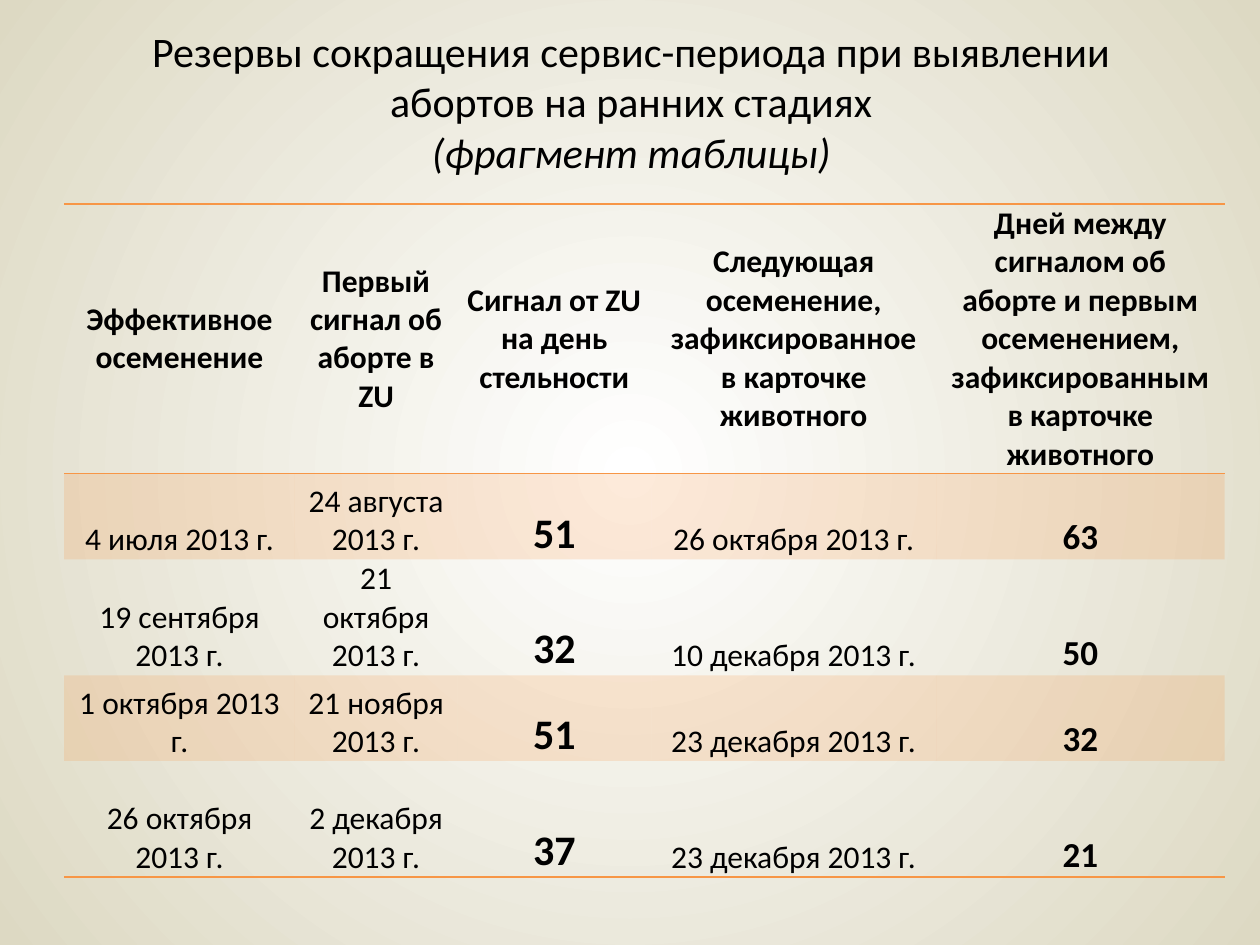
from pptx import Presentation, util as u
from pptx.dml.color import RGBColor
from pptx.enum import text as t
from pptx.oxml import parse_xml
from pptx.oxml.ns import nsdecls, qn

HUES = {"ink": "000000", "line": "F79646", "mid": "FFFFFF", "edge": "DDD9C3"}
PLAIN = "{2D5ABB26-0587-4C30-8999-92F81FD0307C}"
COLS = [1.83, 1.29, 1.54, 2.26, 2.29]
ROWS = [2.14, 0.68, 0.92, 0.68, 0.92]
SIZES = [18, 18, 24, 18, 20]
BOLD = [False, False, True, False, True]
HEAD = [
    "Эффективное осеменение",
    "Первый сигнал об аборте в ZU",
    "Сигнал от ZU на день стельности",
    "Следующая\nосеменение, зафиксированное в карточке животного",
    "Дней между сигналом об аборте и первым осеменением, "
    "зафиксированным в карточке животного",
]
BODY = [
    ["4 июля 2013 г.", "24 августа 2013 г.", "51", "26 октября 2013 г.", "63"],
    ["19 сентября 2013 г.", "21 октября 2013 г.", "32", "10 декабря 2013 г.", "50"],
    ["1 октября 2013 г.", "21 ноября 2013 г.", "51", "23 декабря 2013 г.", "32"],
    ["26 октября 2013 г.", "2 декабря 2013 г.", "37", "23 декабря 2013 г.", "21"],
]


def add_run(para, words, size, bold=False, slant=False):
    run = para.add_run()
    run.text = words
    font = run.font
    font.name = "Calibri"
    font.size = u.Pt(size)
    font.bold = bold
    font.italic = slant
    font.color.rgb = RGBColor.from_string(HUES["ink"])


def set_back(slide):
    slide.background.fill.solid()
    props = slide.background._cSld.find(qn("p:bg")).find(qn("p:bgPr"))
    old = props.find(qn("a:solidFill"))
    props.replace(old, parse_xml(
        f'<a:gradFill {nsdecls("a")} rotWithShape="1"><a:gsLst>'
        f'<a:gs pos="0"><a:srgbClr val="{HUES["mid"]}"/></a:gs>'
        f'<a:gs pos="100000"><a:srgbClr val="{HUES["edge"]}"/></a:gs>'
        '</a:gsLst><a:path path="circle">'
        '<a:fillToRect l="50000" t="50000" r="50000" b="50000"/>'
        '</a:path></a:gradFill>'))


def add_title(slide):
    title = slide.shapes.title
    title.left, title.top = u.Inches(0.51), u.Inches(0.13)
    title.width, title.height = u.Inches(9), u.Inches(1.34)
    frame = title.text_frame
    frame.vertical_anchor = t.MSO_ANCHOR.MIDDLE
    para = frame.paragraphs[0]
    para.alignment = t.PP_ALIGN.CENTER
    add_run(para, "Резервы сокращения сервис-периода при выявлении "
                  "абортов на ранних стадиях", 24)
    para.add_line_break()
    add_run(para, "(фрагмент таблицы)", 24, slant=True)


def add_edge(cell, side):
    cell._tc.get_or_add_tcPr().append(parse_xml(
        f'<a:{side} {nsdecls("a")} w="12700"><a:solidFill>'
        f'<a:srgbClr val="{HUES["line"]}"/></a:solidFill></a:{side}>'))


def add_tint(cell):
    cell._tc.get_or_add_tcPr().append(parse_xml(
        f'<a:solidFill {nsdecls("a")}><a:srgbClr val="{HUES["line"]}">'
        '<a:alpha val="20000"/></a:srgbClr></a:solidFill>'))


def fill_cell(cell, words, size, bold, anchor):
    cell.margin_left = cell.margin_right = u.Inches(0.07)
    cell.margin_top = cell.margin_bottom = 0
    cell.vertical_anchor = anchor
    frame = cell.text_frame
    for i, part in enumerate(words.split("\n")):
        para = frame.add_paragraph() if i else frame.paragraphs[0]
        para.alignment = t.PP_ALIGN.CENTER
        add_run(para, part, size, bold)


def add_grid(slide):
    frame = slide.shapes.add_table(
        len(ROWS), len(COLS), u.Inches(0.51), u.Inches(1.62),
        u.Inches(sum(COLS)), u.Inches(sum(ROWS)))
    table = frame.table
    table.horz_banding = False
    table._tbl.tblPr.find(qn("a:tableStyleId")).text = PLAIN
    for col, wide in zip(table.columns, COLS):
        col.width = u.Inches(wide)
    for row, high in zip(table.rows, ROWS):
        row.height = u.Inches(high)
    for r, line in enumerate([HEAD] + BODY):
        for c, words in enumerate(line):
            cell = table.cell(r, c)
            if r == 0:
                fill_cell(cell, words, 18, True, t.MSO_ANCHOR.MIDDLE)
                add_edge(cell, "lnT")
            else:
                fill_cell(cell, words, SIZES[c], BOLD[c], t.MSO_ANCHOR.BOTTOM)
            if r in (0, len(BODY)):
                add_edge(cell, "lnB")
            if r % 2:
                add_tint(cell)
            else:
                cell.fill.background()


def main():
    deck = Presentation()
    deck.slide_width, deck.slide_height = u.Inches(10), u.Inches(7.5)
    slide = deck.slides.add_slide(deck.slide_layouts[5])
    set_back(slide)
    add_title(slide)
    add_grid(slide)
    deck.save("out.pptx")


if __name__ == "__main__":
    main()
